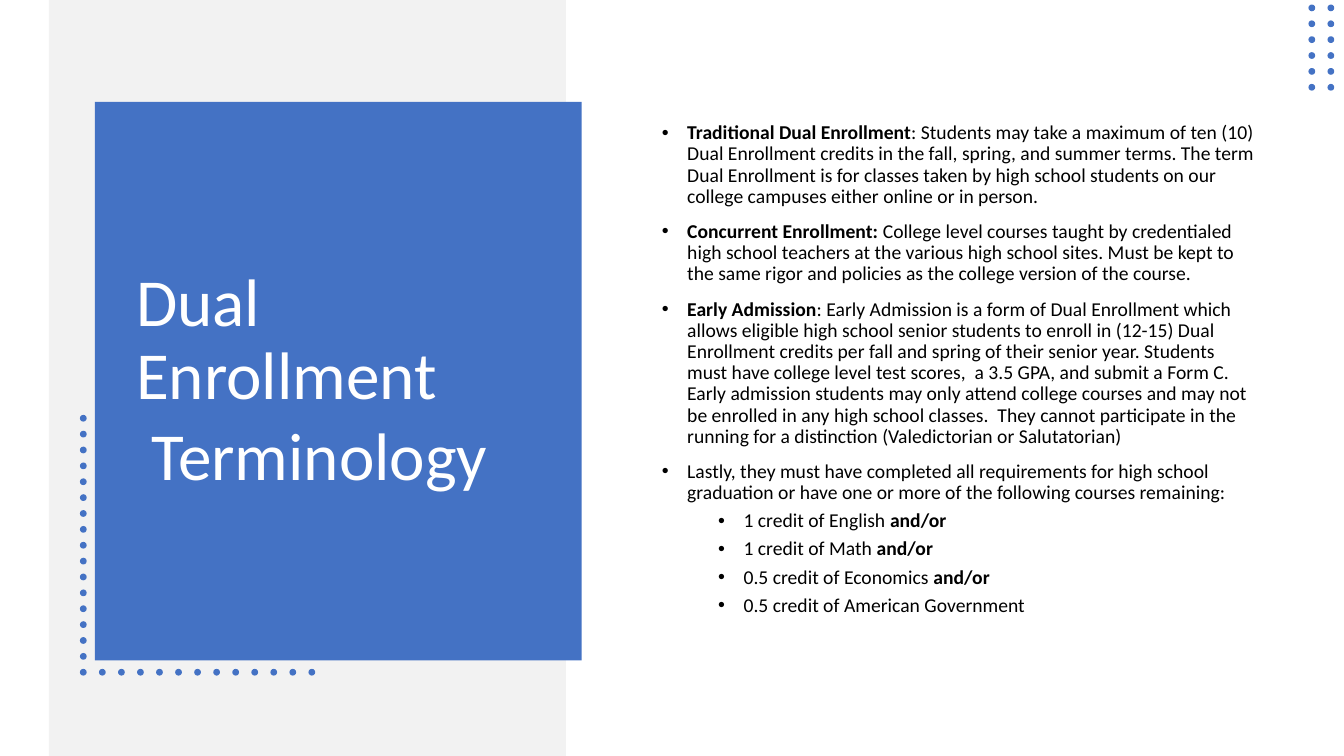
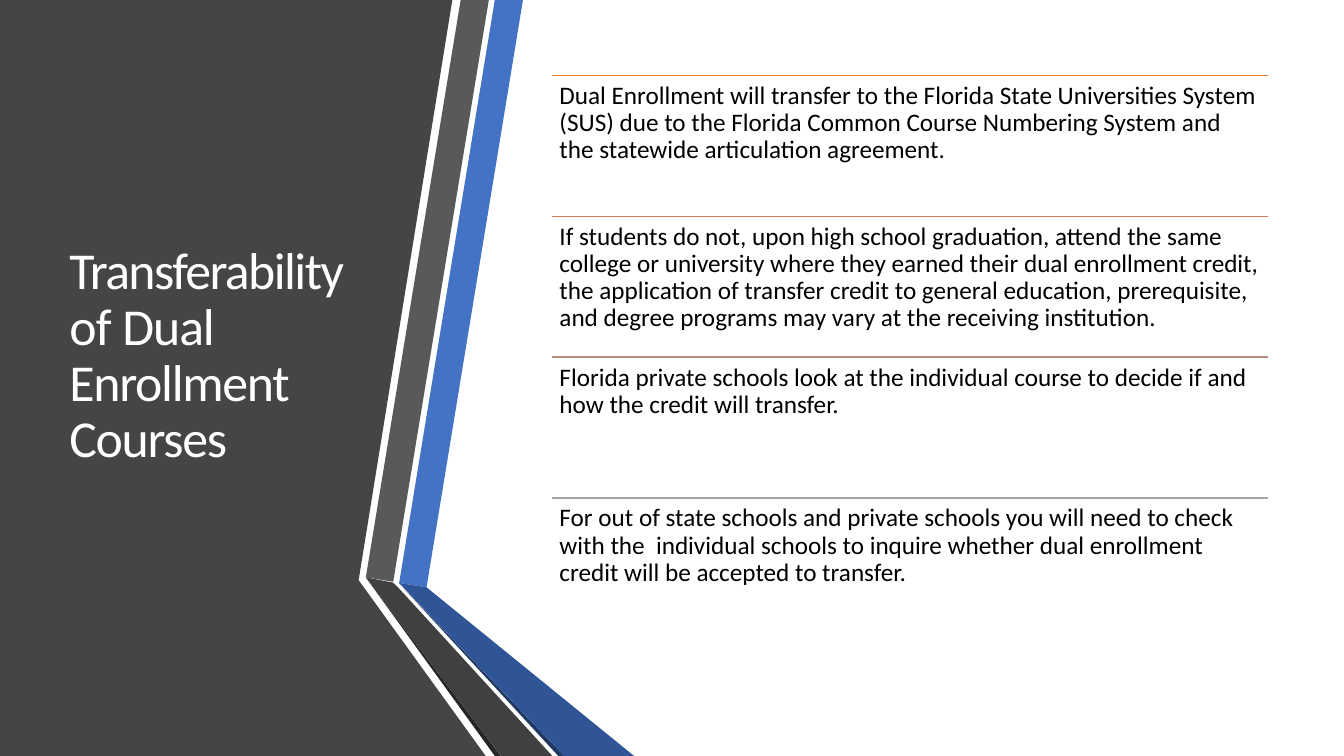
import pptx
import pptx.dml.color
import pptx.enum.shapes
import pptx.enum.text
import pptx.oxml
import pptx.oxml.ns
import pptx.util
from pptx.util import Cm, Pt

FONT = "Calibri"
SLIDE_WIDTH, SLIDE_HEIGHT = 33.87, 19.05
COLORS = {
    "white": "FFFFFF", "black": "000000", "band": "F2F2F2", "blue": "4472C4",
    "deep_blue": "2F5597", "navy": "203864", "panel": "454545", "gray": "595959",
    "charcoal": "404040", "near_black": "262626", "orange": "ED7D31",
    "copper": "D17B5C", "rose": "B98A82", "silver": "A5A5A5",
}

# Positions are in centimetres: left, top, width, height.
TERMS_TITLE = [[("Dual Enrollment", 0)], [(" Terminology", 0)]]
TERMS_TITLE_BOX = (3.18, 3.68, 10.52, 11.89)
TERMS_BODY_BOX = (16.43, 2.97, 15.44, 13.3)
TERMS_BLOCKS = [("band", (1.23, 0, 13.03, SLIDE_HEIGHT)),
                ("blue", (2.39, 2.57, 12.27, 14.07))]

# Each paragraph: level, then runs of (text, bold).
TERMS = [
    (0, [("Traditional Dual Enrollment", True),
         (": Students may take a maximum of ten (10) Dual Enrollment credits in the fall, "
          "spring, and summer terms. The term Dual Enrollment is for classes taken by high "
          "school students on our college campuses either online or in person.", False)]),
    (0, [("Concurrent Enrollment: ", True),
         ("College level courses taught by credentialed high school teachers at the various "
          "high school sites. Must be kept to the same rigor and policies as the college "
          "version of the course.", False)]),
    (0, [("Early Admission", True),
         (": Early Admission is a form of Dual Enrollment which allows eligible high school "
          "senior students to enroll in (12-15) Dual Enrollment credits per fall and spring "
          "of their senior year. Students must have college level test scores,  a 3.5 GPA, "
          "and submit a Form C. Early admission students may only attend college courses and "
          "may not be enrolled in any high school classes.  They cannot participate in the "
          "running for a distinction (Valedictorian or Salutatorian)", False)]),
    (0, [("Lastly, they must have completed all requirements for high school graduation or "
          "have one or more of the following courses remaining:", False)]),
    (1, [("1 credit of English ", False), ("and/or", True)]),
    (1, [("1 credit of Math ", False), ("and/or", True)]),
    (1, [("0.5 credit of Economics ", False), ("and/or", True)]),
    (1, [("0.5 credit of American Government", False)]),
]
LEVELS = [{"margin": 0.64, "before": 10}, {"margin": 2.06, "before": 5}]
BULLET_HANG = 0.64

DOT_SIZE = 0.17
DOT_STEP_X, DOT_STEP_Y = 0.48, 0.4
CORNER_DOT = (2.1, 16.94)
TOP_DOT = (33.06, 0.2)
DOT_CENTERS = (
    [(CORNER_DOT[0], CORNER_DOT[1] - i * DOT_STEP_Y) for i in range(17)]
    + [(CORNER_DOT[0] + i * DOT_STEP_X, CORNER_DOT[1]) for i in range(1, 13)]
    + [(TOP_DOT[0] + column * DOT_STEP_X, TOP_DOT[1] + row * DOT_STEP_Y)
       for column in range(2) for row in range(6)]
)

# Runs of (text, letter spacing in points).
TRANSFER_TITLE = [[("Transferability ", -1.1), ("of ", -0.6), ("Dual ", -0.8),
                   ("Enrollment Courses", -0.9)]]
TRANSFER_TITLE_BOX = (1.5, 1.9, 7.72, 14.17)
RIBBONS = [
    ("panel", [(0, 0), (11.4, 0), (9.04, 14.62), (12.24, SLIDE_HEIGHT), (0, SLIDE_HEIGHT)]),
    ("blue", [(10.06, 14.69), (10.75, 14.8), (13.18, 0), (12.47, 0)]),
    ("gray", [(12.32, 0), (11.61, 0), (9.22, 14.55), (9.91, 14.66)]),
    ("near_black", [(9.22, 14.55), (12.47, SLIDE_HEIGHT), (12.62, SLIDE_HEIGHT)]),
    ("navy", [(10.06, 14.7), (14.07, SLIDE_HEIGHT), (14.22, SLIDE_HEIGHT)]),
    ("deep_blue", [(10.06, 14.69), (14.22, SLIDE_HEIGHT), (15.98, SLIDE_HEIGHT),
                   (10.75, 14.8)]),
    ("charcoal", [(13.92, SLIDE_HEIGHT), (10.03, 14.8), (9.9, 14.68), (9.22, 14.55),
                  (12.62, SLIDE_HEIGHT)]),
]
RULES = [
    ("orange", "Dual Enrollment will transfer to the Florida State Universities System (SUS) "
     "due to the Florida Common Course Numbering System and the statewide articulation "
     "agreement."),
    ("copper", "If students do not, upon high school graduation, attend the same college or "
     "university where they earned their dual enrollment credit, the application of transfer "
     "credit to general education, prerequisite, and degree programs may vary at the "
     "receiving institution."),
    ("rose", "Florida private schools look at the individual course to decide if and how the "
     "credit will transfer."),
    ("silver", "For out of state schools and private schools you will need to check with the  "
     "individual schools to inquire whether dual enrollment credit will be accepted to "
     "transfer."),
]
RULE_LEFT, RULE_TOP, RULE_WIDTH, RULE_HEIGHT = 13.92, 1.9, 18.03, 3.55
RULE_INSET = 0.18


def rgb(name):
    return pptx.dml.color.RGBColor.from_string(COLORS[name])


def paint(shape, color):
    shape.shadow.inherit = False
    shape.fill.solid()
    shape.fill.fore_color.rgb = rgb(color)
    shape.line.fill.background()


def add_block(slide, kind, box, color):
    shape = slide.shapes.add_shape(kind, *map(Cm, box))
    paint(shape, color)


def add_polygon(slide, points, color):
    corners = [(Cm(x), Cm(y)) for x, y in points]
    builder = slide.shapes.build_freeform(*corners[0])
    builder.add_line_segments(corners[1:], close=True)
    paint(builder.convert_to_shape(), color)


def add_text_frame(slide, box, anchor):
    text_frame = slide.shapes.add_textbox(*map(Cm, box)).text_frame
    text_frame.word_wrap = True
    text_frame.vertical_anchor = anchor
    return text_frame


def next_paragraph(text_frame, index):
    paragraph = text_frame.add_paragraph() if index else text_frame.paragraphs[0]
    paragraph.line_spacing = 0.9
    return paragraph


def add_run(paragraph, text, size, color, bold=False):
    run = paragraph.add_run()
    run.text = text
    run.font.name = FONT
    run.font.size = Pt(size)
    run.font.bold = bold
    run.font.color.rgb = rgb(color)
    return run


def add_title(slide, box, paragraphs, size):
    text_frame = add_text_frame(slide, box, pptx.enum.text.MSO_ANCHOR.MIDDLE)
    for index, runs in enumerate(paragraphs):
        paragraph = next_paragraph(text_frame, index)
        paragraph.space_after = Pt(6)
        for text, spacing in runs:
            run = add_run(paragraph, text, size, "white")
            if spacing:
                run.font._element.set("spc", str(round(spacing * 100)))


def set_bullet(paragraph, margin):
    properties = paragraph._p.get_or_add_pPr()
    properties.set("marL", str(Cm(margin)))
    properties.set("indent", str(-Cm(BULLET_HANG)))
    for tag, attribute, value in (("a:buFont", "typeface", "Arial"), ("a:buChar", "char", "•")):
        element = pptx.oxml.parse_xml(f"<{tag} {pptx.oxml.ns.nsdecls('a')} {attribute}='{value}'/>")
        properties.append(element)


def add_rule(slide, left, top, width, color):
    line = slide.shapes.add_connector(
        pptx.enum.shapes.MSO_CONNECTOR.STRAIGHT, Cm(left), Cm(top), Cm(left + width), Cm(top))
    line.line.color.rgb = rgb(color)
    line.line.width = Pt(1)
    line._element.spPr.append(
        pptx.oxml.parse_xml(f"<a:effectLst {pptx.oxml.ns.nsdecls('a')}/>"))


def build_terminology(slide):
    shapes = pptx.enum.shapes.MSO_SHAPE
    for color, box in TERMS_BLOCKS:
        add_block(slide, shapes.RECTANGLE, box, color)
    for x, y in DOT_CENTERS:
        box = (x - DOT_SIZE / 2, y - DOT_SIZE / 2, DOT_SIZE, DOT_SIZE)
        add_block(slide, shapes.OVAL, box, "blue")
    add_title(slide, TERMS_TITLE_BOX, TERMS_TITLE, 48)

    text_frame = add_text_frame(slide, TERMS_BODY_BOX, pptx.enum.text.MSO_ANCHOR.TOP)
    for index, (level, runs) in enumerate(TERMS):
        paragraph = next_paragraph(text_frame, index)
        paragraph.level = level
        paragraph.space_before = Pt(LEVELS[level]["before"] if index else 0)
        set_bullet(paragraph, LEVELS[level]["margin"])
        for text, bold in runs:
            add_run(paragraph, text, 14, "black", bold)


def build_transferability(slide):
    for color, points in RIBBONS:
        add_polygon(slide, points, color)
    add_title(slide, TRANSFER_TITLE_BOX, TRANSFER_TITLE, 37)

    for index, (color, text) in enumerate(RULES):
        top = RULE_TOP + index * RULE_HEIGHT
        add_rule(slide, RULE_LEFT, top, RULE_WIDTH, color)
        text_frame = add_text_frame(slide, (RULE_LEFT, top, RULE_WIDTH, RULE_HEIGHT),
                                    pptx.enum.text.MSO_ANCHOR.TOP)
        text_frame.margin_left = text_frame.margin_right = Cm(RULE_INSET)
        text_frame.margin_top = text_frame.margin_bottom = Cm(RULE_INSET)
        add_run(next_paragraph(text_frame, 0), text, 18, "black")


def main():
    presentation = pptx.Presentation()
    presentation.slide_width = Cm(SLIDE_WIDTH)
    presentation.slide_height = Cm(SLIDE_HEIGHT)
    for build in (build_terminology, build_transferability):
        build(presentation.slides.add_slide(presentation.slide_layouts[6]))
    presentation.save("out.pptx")


if __name__ == "__main__":
    main()
